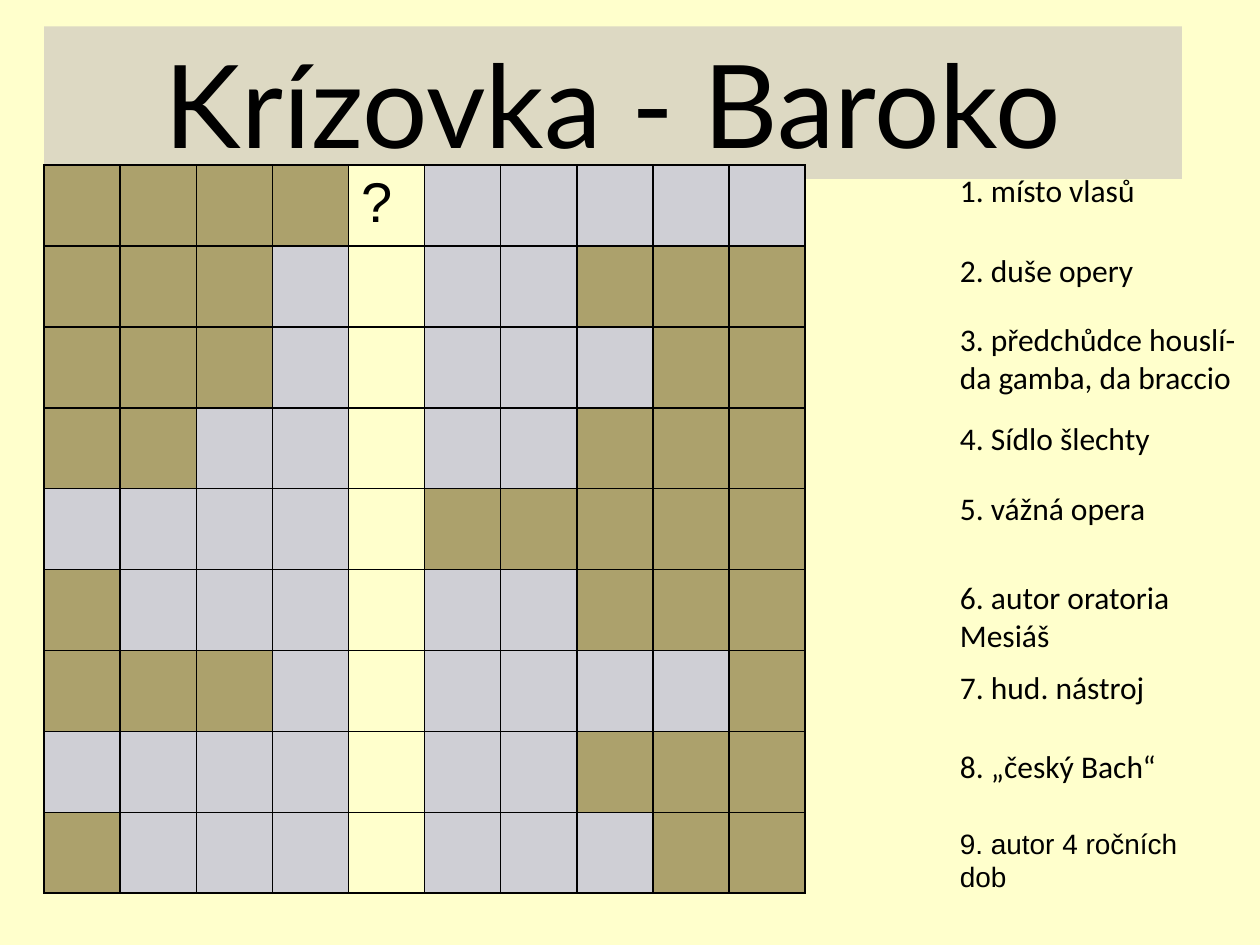
from dataclasses import dataclass

from lxml.etree import SubElement
from pptx import Presentation
from pptx.dml.color import RGBColor as RGB
from pptx.enum.shapes import MSO_SHAPE as Shape
from pptx.enum.text import MSO_ANCHOR as Anchor, PP_ALIGN as Align
from pptx.oxml.ns import qn
from pptx.util import Inches, Pt


@dataclass(frozen=True)
class Theme:
    paper: RGB = RGB.from_string("FFFFCC")
    banner: RGB = RGB.from_string("DDD9C3")
    blank: RGB = RGB.from_string("ACA16C")
    letter: RGB = RGB.from_string("CFCFD5")
    ink: RGB = RGB.from_string("000000")
    title: tuple = ("Lato", 66)
    mark: tuple = ("Arial", 32)
    clue: tuple = ("Calibri", 18)
    last_clue: tuple = ("Arial", 16)
    rule: float = 1


THEME = Theme()
WIDTH, HEIGHT = 10, 7.5
COLS, KEY_COL = 10, 4

# First letter column and the column after the last one, for each answer
ANSWERS = [(4, 10), (3, 7), (3, 8), (2, 7), (0, 5), (1, 7), (3, 9), (0, 7), (1, 8)]

# Top and width in inches, lines of text, type
CLUES = [
    (1.31, 2.05, ["1. místo vlasů"], THEME.clue),
    (1.94, 2.05, ["2. duše opery"], THEME.clue),
    (2.49, 2.42, ["3. předchůdce houslí-", "da gamba, da braccio"], THEME.clue),
    (3.28, 2.05, ["4. Sídlo šlechty"], THEME.clue),
    (3.83, 2.05, ["5. vážná opera"], THEME.clue),
    (4.54, 2.05, ["6. autor oratoria Mesiáš"], THEME.clue),
    (5.25, 2.05, ["7. hud. nástroj"], THEME.clue),
    (5.88, 2.05, ["8. „český Bach“"], THEME.clue),
    (6.51, 2.05, ["9. autor 4 ročních dob"], THEME.last_clue),
]


def box(*lengths):
    return [Inches(n) for n in lengths]


def write(tf, lines, font, align=Align.LEFT):
    tf.word_wrap = True
    name, size = font
    for i, line in enumerate(lines):
        p = tf.add_paragraph() if i else tf.paragraphs[0]
        p.alignment = align
        r = p.add_run()
        r.text = line
        for key, value in {"name": name, "size": Pt(size)}.items():
            setattr(r.font, key, value)
        r.font.color.rgb = THEME.ink


def paint(part, color):
    part.fill.solid()
    part.fill.fore_color.rgb = color


def outline_cell(cell):
    """Rule all four sides; call before filling, as borders come first in tcPr."""
    tc_pr = cell._tc.get_or_add_tcPr()
    for side in ("a:lnL", "a:lnR", "a:lnT", "a:lnB"):
        ln = SubElement(tc_pr, qn(side), w=str(Pt(THEME.rule)))
        fill = SubElement(ln, qn("a:solidFill"))
        SubElement(fill, qn("a:srgbClr"), val=str(THEME.ink))


def add_title(slide, area, text):
    sp = slide.shapes.add_shape(Shape.RECTANGLE, *area)
    sp.shadow.inherit = False
    sp.line.fill.background()
    paint(sp, THEME.banner)
    sp.text_frame.vertical_anchor = Anchor.MIDDLE
    write(sp.text_frame, [text], THEME.title, Align.CENTER)


def add_crossword(slide, area):
    table = slide.shapes.add_table(len(ANSWERS), COLS, *area).table
    table.first_row = table.horz_banding = False
    for row, (start, end) in enumerate(ANSWERS):
        for col in range(COLS):
            cell = table.cell(row, col)
            outline_cell(cell)
            if col == KEY_COL:
                paint(cell, THEME.paper)
            else:
                paint(cell, THEME.letter if start <= col < end else THEME.blank)
    write(table.cell(0, KEY_COL).text_frame, ["?"], THEME.mark)


def add_clues(slide, left):
    for top, width, lines, font in CLUES:
        sp = slide.shapes.add_textbox(*box(left, top, width, 0.4 * len(lines)))
        write(sp.text_frame, lines, font)


def main():
    prs = Presentation()
    prs.slide_width, prs.slide_height = box(WIDTH, HEIGHT)
    slide = prs.slides.add_slide(prs.slide_layouts[6])
    paint(slide.background, THEME.paper)
    add_title(slide, box(0.35, 0.21, 9.03, 1.21), "Krízovka - Baroko")
    add_crossword(slide, box(0.35, 1.31, 6.04, 5.78))
    add_clues(slide, 7.52)
    prs.save("out.pptx")


if __name__ == "__main__":
    main()
